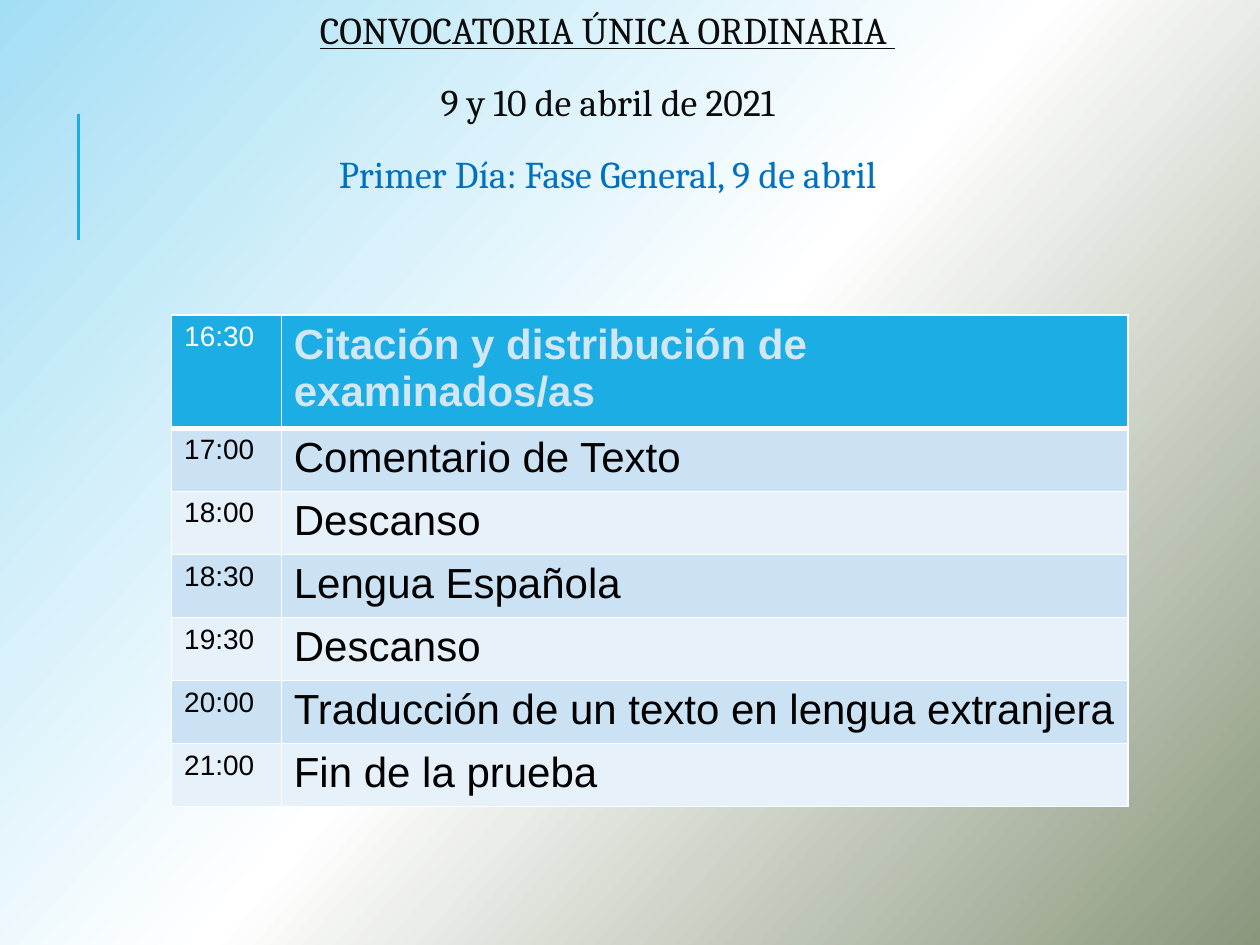
"""Build the exam timetable slide for the first day of the ordinary sitting."""
from copy import deepcopy

from lxml import etree
from pptx import Presentation
from pptx import util as u
from pptx.dml.color import RGBColor
from pptx.enum import shapes, text
from pptx.oxml import ns

BLUE = RGBColor(0x1C, 0xAD, 0xE4)
SKY = RGBColor(0xA4, 0xDE, 0xF4)
WHITE = RGBColor(0xFF, 0xFF, 0xFF)
OLIVE = RGBColor(0x8A, 0x97, 0x7D)
INK = RGBColor(0x0C, 0x0C, 0x0C)
BLACK = RGBColor(0, 0, 0)
DAY_BLUE = RGBColor(0x00, 0x70, 0xC0)
PALE_BLUE = RGBColor(0xD1, 0xE7, 0xF6)
BANDS = [RGBColor(0xE7, 0xF1, 0xFA), RGBColor(0xCB, 0xE2, 0xF5)]


def add_run(paragraph, words, font, size, color):
    run = paragraph.add_run()
    run.text = words
    run.font.name = font
    run.font.size = u.Pt(size)
    run.font.color.rgb = color
    return run


def add_borders(cell, widths):
    properties = cell._tc.get_or_add_tcPr()
    for place, (side, width) in enumerate(widths.items()):
        edge = etree.Element(ns.qn(f"a:ln{side}"), w=str(u.Pt(width)))
        fill = etree.SubElement(edge, ns.qn("a:solidFill"))
        etree.SubElement(fill, ns.qn("a:srgbClr"), val=str(WHITE))
        properties.insert(place, edge)


prs = Presentation()
prs.slide_width, prs.slide_height = u.Cm(25.4), u.Cm(19.05)
slide = prs.slides.add_slide(prs.slide_layouts[6])

backdrop = slide.background.fill
backdrop.gradient()
backdrop.gradient_angle = 318
stops = slide._element.find(f".//{ns.qn('a:gsLst')}")
stops.append(deepcopy(stops[0]))
for stop, color, position in zip(backdrop.gradient_stops, [SKY, WHITE, OLIVE], [0, 0.5, 1]):
    stop.color.rgb = color
    stop.position = position

accent = slide.shapes.add_connector(
    shapes.MSO_CONNECTOR.STRAIGHT, u.Cm(1.58), u.Cm(4.83), u.Cm(1.58), u.Cm(2.29))
accent.line.color.rgb = BLUE
accent.line.width = u.Pt(1.5)
etree.SubElement(accent._element.spPr, ns.qn("a:effectLst"))

heading = slide.shapes.add_textbox(u.Cm(2.13), u.Cm(0), u.Cm(20.24), u.Cm(4.27)).text_frame
heading.word_wrap = True
heading.vertical_anchor = text.MSO_ANCHOR.MIDDLE
headlines = [
    ("CONVOCATORIA ÚNICA ORDINARIA ", INK, True),
    ("9 y 10 de abril de 2021", INK, False),
    ("Primer Día: Fase General, 9 de abril", DAY_BLUE, False),
]
for index, (words, color, underlined) in enumerate(headlines):
    headline = heading.add_paragraph() if index else heading.paragraphs[0]
    headline.alignment = text.PP_ALIGN.CENTER
    headline.line_spacing = 0.8
    headline.space_before = u.Pt(20.5 if index else 0)
    add_run(headline, words, "Cambria", 21.6, color).font.underline = underlined

sessions = [
    ("16:30", "Citación y distribución de examinados/as"),
    ("17:00", "Comentario de Texto"),
    ("18:00", "Descanso"),
    ("18:30", "Lengua Española"),
    ("19:30", "Descanso"),
    ("20:00", "Traducción de un texto en lengua extranjera"),
    ("21:00", "Fin de la prueba"),
]
timetable = slide.shapes.add_table(
    len(sessions), 2, u.Cm(3.46), u.Cm(6.35), u.Cm(19.28), u.Cm(7.28)).table
timetable.columns[0].width = u.Cm(2.21)
timetable.columns[1].width = u.Cm(17.07)
for row, session in enumerate(sessions):
    timetable.rows[row].height = u.Cm(1.04)
    header = row == 0
    for column, words in enumerate(session):
        cell = timetable.cell(row, column)
        cell.fill.solid()
        cell.fill.fore_color.rgb = BLUE if header else BANDS[row % 2]
        color = [WHITE, PALE_BLUE][column] if header else BLACK
        entry = add_run(cell.text_frame.paragraphs[0], words, "Arial", [16, 24][column], color)
        entry.font.bold = header and column == 1
        add_borders(cell, {"L": 1, "R": 1, "T": 3 if row == 1 else 1, "B": 3 if header else 1})

prs.save("out.pptx")
